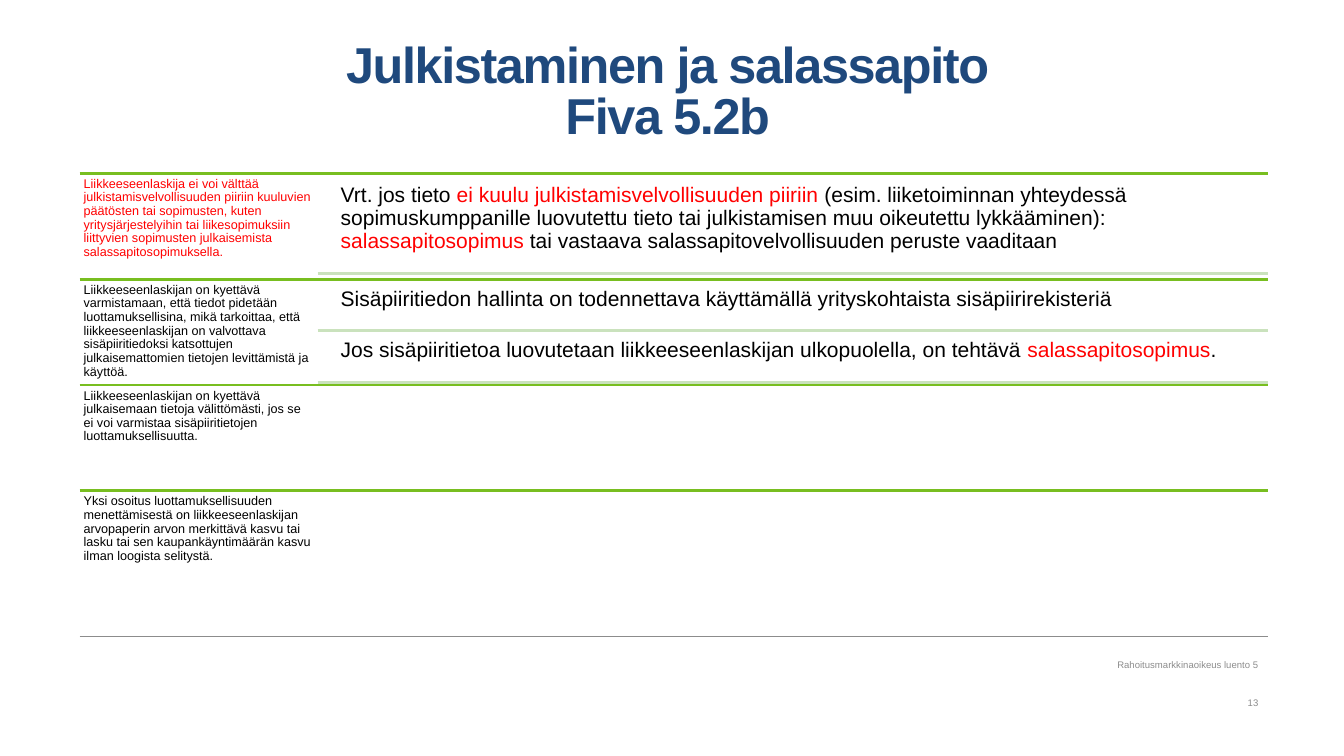
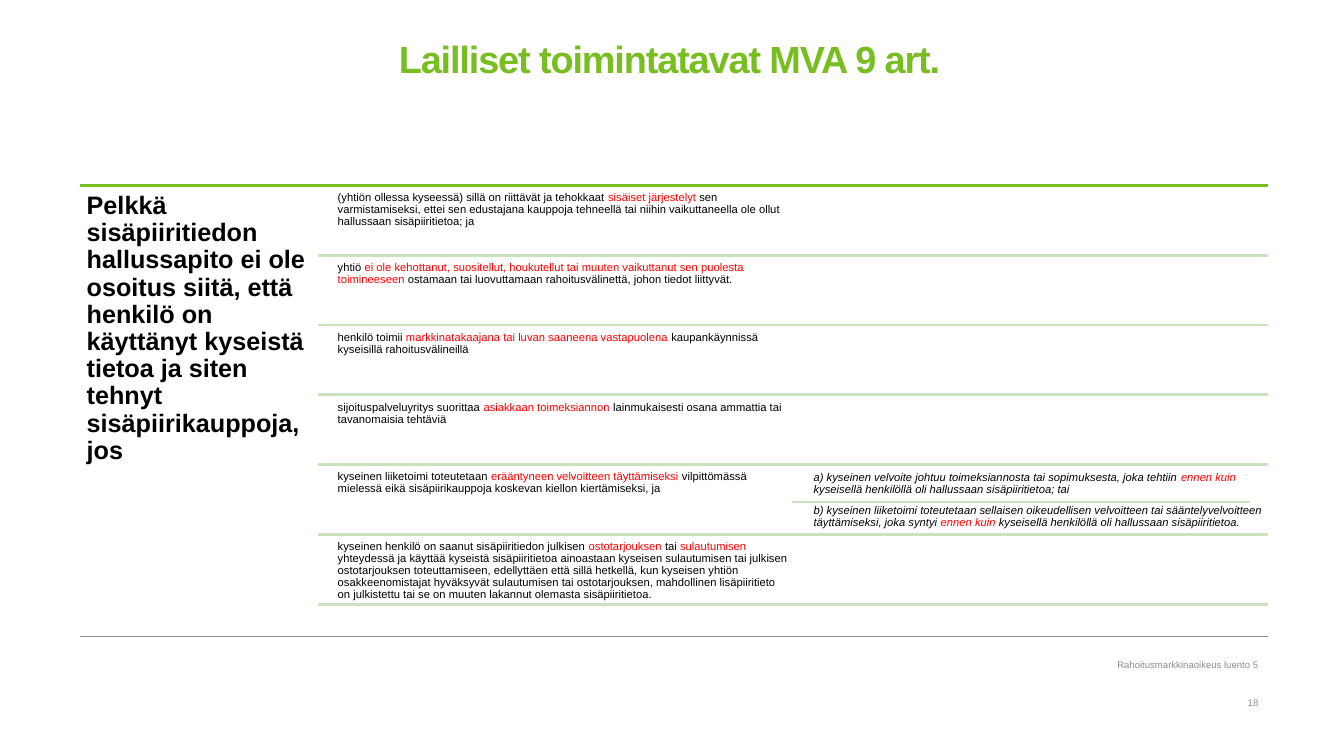
import pptx
import pptx.util
import pptx.dml.color
import pptx.enum.shapes
import pptx.enum.text
import pptx.oxml.ns
import lxml.etree

Inches = pptx.util.Inches
Pt = pptx.util.Pt
rgb = pptx.dml.color.RGBColor.from_string
PP_ALIGN = pptx.enum.text.PP_ALIGN
MSO_ANCHOR = pptx.enum.text.MSO_ANCHOR

FONT = "Arial"
BLACK, RED, GREY = "000000", "FF0000", "8C8C8C"
NAVY, GREEN, PALE = "1F497D", "78BE20", "CAE2BD"
LEFT, RIGHT = 0.79, 12.58
LABEL_W = 2.36
ITEM_RULE_X = LEFT + LABEL_W
ITEM_X = 3.32
SUB_RULE_X, SUB_X, SUB_W = 7.86, 8.04, 4.54


def add_rule(s, x1, x2, y, color, width=2):
    line = s.shapes.add_connector(
        pptx.enum.shapes.MSO_CONNECTOR.STRAIGHT,
        Inches(x1), Inches(y), Inches(x2), Inches(y))
    line.line.color.rgb = rgb(color)
    line.line.width = Pt(width)
    lxml.etree.SubElement(line._element.spPr, pptx.oxml.ns.qn("a:effectLst"))


def add_text(s, box, insets, runs, size, colors=(BLACK, RED), bold=False,
             italic=False, spacing=0.9, align=PP_ALIGN.LEFT, anchor=MSO_ANCHOR.TOP):
    sp = s.shapes.add_textbox(*[Inches(v) for v in box])
    tf = sp.text_frame
    tf.word_wrap = True
    tf.vertical_anchor = anchor
    tf.margin_left, tf.margin_top, tf.margin_right, tf.margin_bottom = [
        Inches(v) for v in insets]
    p = tf.paragraphs[0]
    p.alignment = align
    p.line_spacing = spacing
    for i, words in enumerate(runs):
        if words:
            r = p.add_run()
            r.text = words
            r.font.name = FONT
            r.font.size = Pt(size)
            r.font.bold = bold
            r.font.italic = italic
            r.font.color.rgb = rgb(colors[i % 2])


# Runs alternate between black and red, starting with black.
disclosure_bands = [
    (["", "Liikkeeseenlaskija ei voi välttää julkistamisvelvollisuuden piiriin kuuluvien "
      "päätösten tai sopimusten, kuten yritysjärjestelyihin tai liikesopimuksiin liittyvien "
      "sopimusten julkaisemista salassapitosopimuksella."],
     [["Vrt. jos tieto ", "ei kuulu julkistamisvelvollisuuden piiriin ",
       "(esim. liiketoiminnan yhteydessä sopimuskumppanille luovutettu tieto tai "
       "julkistamisen muu oikeutettu lykkääminen): ", "salassapitosopimus",
       " tai vastaava salassapitovelvollisuuden peruste vaaditaan"]]),
    (["Liikkeeseenlaskijan on kyettävä varmistamaan, että tiedot pidetään luottamuksellisina, "
      "mikä tarkoittaa, että liikkeeseenlaskijan on valvottava sisäpiiritiedoksi katsottujen "
      "julkaisemattomien tietojen levittämistä ja käyttöä."],
     [["Sisäpiiritiedon hallinta on todennettava käyttämällä yrityskohtaista "
       "sisäpiirirekisteriä"],
      ["Jos sisäpiiritietoa luovutetaan liikkeeseenlaskijan ulkopuolella, on tehtävä ",
       "salassapitosopimus", "."]]),
    (["Liikkeeseenlaskijan on kyettävä julkaisemaan tietoja välittömästi, jos se ei voi "
      "varmistaa sisäpiiritietojen luottamuksellisuutta."], []),
    (["Yksi osoitus luottamuksellisuuden menettämisestä on liikkeeseenlaskijan arvopaperin "
      "arvon merkittävä kasvu tai lasku tai sen kaupankäyntimäärän kasvu ilman loogista "
      "selitystä."], []),
]

lawful_bands = [
    (["Pelkkä sisäpiiritiedon hallussapito ei ole osoitus siitä, että henkilö on käyttänyt "
      "kyseistä tietoa ja siten tehnyt sisäpiirikauppoja, jos"],
     [["(yhtiön ollessa kyseessä) sillä on riittävät ja tehokkaat ", "sisäiset järjestelyt ",
       "sen varmistamiseksi, ettei sen edustajana kauppoja tehneellä tai niihin "
       "vaikuttaneella ole ollut hallussaan sisäpiiritietoa; ja"],
      ["yhtiö ", "ei ole kehottanut, suositellut, houkutellut tai muuten vaikuttanut sen "
       "puolesta toimineeseen ",
       "ostamaan tai luovuttamaan rahoitusvälinettä, johon tiedot liittyvät."],
      ["henkilö toimii ", "markkinatakaajana tai luvan saaneena vastapuolena ",
       "kaupankäynnissä kyseisillä rahoitusvälineillä"],
      ["sijoituspalveluyritys suorittaa ", "asiakkaan toimeksiannon ",
       "lainmukaisesti osana ammattia tai tavanomaisia tehtäviä"],
      ["kyseinen liiketoimi toteutetaan ", "erääntyneen velvoitteen täyttämiseksi ",
       "vilpittömässä mielessä eikä sisäpiirikauppoja koskevan kiellon kiertämiseksi, ja"],
      ["kyseinen henkilö on saanut sisäpiiritiedon julkisen ", "ostotarjouksen", " tai ",
       "sulautumisen",
       " yhteydessä ja käyttää kyseistä sisäpiiritietoa ainoastaan kyseisen sulautumisen tai "
       "julkisen ostotarjouksen toteuttamiseen, edellyttäen että sillä hetkellä, kun kyseisen "
       "yhtiön osakkeenomistajat hyväksyvät sulautumisen tai ostotarjouksen, mahdollinen "
       "lisäpiiritieto on julkistettu tai se on muuten lakannut olemasta sisäpiiritietoa."]]),
]

obligation_origins = [
    ["a) kyseinen velvoite johtuu toimeksiannosta tai sopimuksesta, joka tehtiin ",
     "ennen kuin ", "kyseisellä henkilöllä oli hallussaan sisäpiiritietoa; tai"],
    ["b) kyseinen liiketoimi toteutetaan sellaisen oikeudellisen velvoitteen tai "
     "sääntelyvelvoitteen täyttämiseksi, joka syntyi ", "ennen kuin ",
     "kyseisellä henkilöllä oli hallussaan sisäpiiritietoa."],
]

slides = [
    dict(title=["Julkistaminen ja salassapito ", "Fiva 5.2b "], title_size=36,
         title_color=NAVY, tracking=-100, number="13", bands=disclosure_bands,
         top=1.72, height=1.05, label_size=9, label_inset=0.04, label_bold=False,
         item_size=15, item_inset=0.06, item_w=9.26),
    dict(title=["Lailliset toimintatavat MVA 9 art. "], title_size=27,
         title_color=GREEN, tracking=-80, number="18", bands=lawful_bands,
         top=1.84, height=4.19, label_size=18, label_inset=0.07, label_bold=True,
         item_size=8, item_inset=0.03, item_w=4.54),
]

prs = pptx.Presentation()
prs.slide_width = Inches(13.33)
prs.slide_height = Inches(7.5)

for d in slides:
    s = prs.slides.add_slide(prs.slide_layouts[5])
    add_rule(s, LEFT, RIGHT, 6.31, GREY, 0.75)

    title = s.shapes.title
    title.left, title.top = Inches(LEFT), Inches(0.42)
    title.width, title.height = Inches(RIGHT - LEFT), Inches(1.31)
    tf = title.text_frame
    tf.auto_size = pptx.enum.text.MSO_AUTO_SIZE.NONE
    tf.vertical_anchor = MSO_ANCHOR.TOP
    tf.margin_left = tf.margin_top = tf.margin_right = tf.margin_bottom = 0
    p = tf.paragraphs[0]
    p.alignment = PP_ALIGN.CENTER
    p.line_spacing = 0.85
    for i, words in enumerate(d["title"]):
        if i:
            p.add_line_break()
        r = p.add_run()
        r.text = words
        r.font.name = FONT
        r.font.size = Pt(d["title_size"])
        r.font.bold = True
        r.font.color.rgb = rgb(d["title_color"])
        r.font._element.set("spc", str(d["tracking"]))

    for i, (label, items) in enumerate(d["bands"]):
        top = d["top"] + i * d["height"]
        add_rule(s, LEFT, RIGHT, top, GREEN)
        add_text(s, (LEFT, top, LABEL_W, d["height"]), [d["label_inset"]] * 4, label,
                 d["label_size"], bold=d["label_bold"])
        n = max(len(items), 1)
        gap = 0.05 * d["height"] / n
        item_h = (d["height"] - gap * (n + 1)) / n
        for j, item in enumerate(items):
            y = top + gap + j * (item_h + gap)
            add_text(s, (ITEM_X, y, d["item_w"], item_h), [d["item_inset"]] * 4, item,
                     d["item_size"])
            add_rule(s, ITEM_RULE_X, RIGHT, y + item_h, PALE)

    for y, words in ((6.51, "Rahoitusmarkkinaoikeus luento 5"), (6.89, d["number"])):
        add_text(s, (7.2, y, 5.28, 0.17), (0.1, 0.05, 0, 0.05), [words], 6.8,
                 colors=(GREY,), spacing=1.0, align=PP_ALIGN.RIGHT,
                 anchor=MSO_ANCHOR.MIDDLE)

for i, origin in enumerate(obligation_origins):
    add_text(s, (SUB_X, 4.65 + i * 0.33, SUB_W, 0.33), [0.03] * 4, origin, 8, italic=True)
add_rule(s, SUB_RULE_X, SUB_RULE_X + SUB_W, 4.98, PALE)

prs.save("out.pptx")
